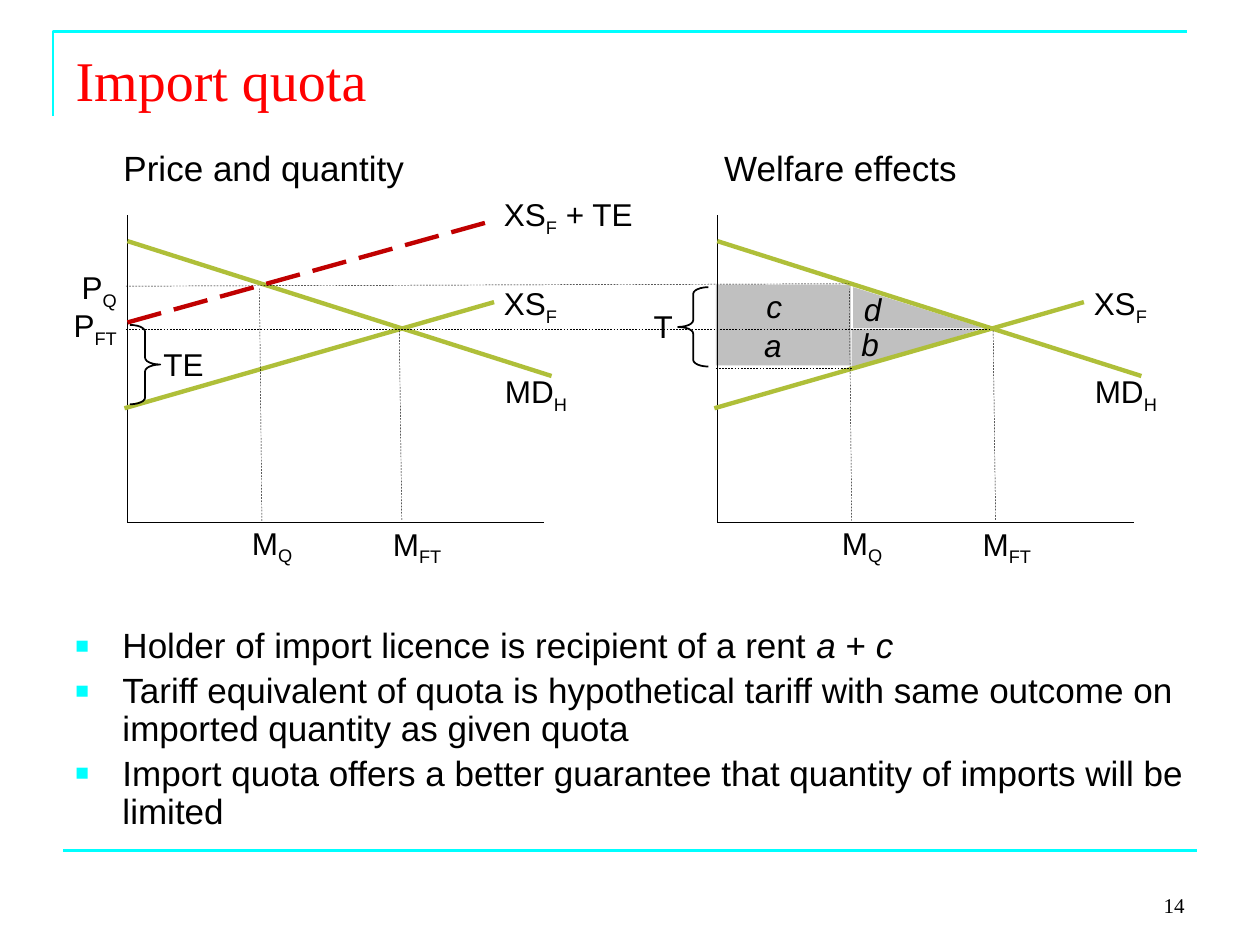
from dataclasses import dataclass

from lxml import etree
from pptx import Presentation
from pptx import util as u
from pptx.dml.color import RGBColor
from pptx.enum import dml, shapes, text
from pptx.oxml import ns

CYAN = RGBColor(0x00, 0xFF, 0xFF)
RED = RGBColor(0xFF, 0x00, 0x00)
CRIMSON = RGBColor(0xC0, 0x00, 0x00)
GREEN = RGBColor(0xAF, 0xBF, 0x39)
GRAY = RGBColor(0xC0, 0xC0, 0xC0)
BLACK = RGBColor(0x00, 0x00, 0x00)
SERIF = "Times New Roman"
LEFT, MID, RIGHT = text.PP_ALIGN.LEFT, text.PP_ALIGN.CENTER, text.PP_ALIGN.RIGHT
DASH, LONG = dml.MSO_LINE.DASH, dml.MSO_LINE.LONG_DASH
KIND = shapes.MSO_SHAPE


@dataclass
class Line:
    x1: float
    y1: float
    x2: float
    y2: float
    color: RGBColor = BLACK
    width: float = 0.25
    dash: dml.MSO_LINE | None = None


@dataclass
class Label:
    words: str
    x: float
    y: float
    w: float = 1.4
    h: float = 1.02
    align: text.PP_ALIGN = MID
    size: float = 18


@dataclass
class Panel:
    shift: float
    guide: float
    title: str
    start: float


@dataclass
class Area:
    kind: shapes.MSO_SHAPE
    x: float
    y: float
    w: float
    flip: bool = False


PANELS = [
    Panel(0, 8.1, "Price and quantity", 2.24),
    Panel(11.89, 8.18, "Welfare effects", 14.35),
]
AREAS = [
    Area(KIND.RIGHT_TRIANGLE, 17.17, 6.63, 2.62, True),
    Area(KIND.RIGHT_TRIANGLE, 17.2, 5.79, 2.62),
    Area(KIND.RECTANGLE, 14.43, 6.55, 2.72),
    Area(KIND.RECTANGLE, 14.43, 5.74, 2.72),
]
CURVES = [
    Line(2.57, 4.34, 2.57, 10.54, width=0.75),
    Line(2.57, 10.54, 10.97, 10.54, width=0.75),
    Line(2.57, 4.86, 11.12, 7.58, GREEN, 2.5),
    Line(2.51, 8.23, 9.96, 6.09, GREEN, 2.5),
    Line(5.28, 10.5, 5.23, 5.82, dash=DASH),
]
NAMES = [
    Label("MD_H", 9.93, 7.38, 2.21, align=LEFT),
    Label("M_FT", 7.67, 10.45, 2.24, align=LEFT),
    Label("XS_F", 9.91, 5.6, 2.57, align=LEFT),
    Label("M_Q", 4.83, 10.43, 2.2, align=LEFT),
]
LINKS = [
    Line(2.57, 6.5, 9.86, 4.47, CRIMSON, 2.5, LONG),
    Line(2.54, 5.77, 17.12, 5.72, dash=DASH),
    Line(2.54, 6.63, 19.96, 6.63, dash=DASH),
    Line(14.43, 7.42, 17.2, 7.42, dash=DASH),
    Line(1.27, 17.15, 24.13, 17.15, CYAN, 1.5),
]
TAGS = [
    Label("XS_F_ + TE", 9.91, 3.81, 3.48, align=LEFT),
    Label("TE", 3, 6.83),
    Label("P_Q", 1.3, 5.28),
    Label("P_FT", 1.12, 6.05, 1.6),
    Label("T", 12.67, 6.07),
    Label("*a*", 14.88, 6.45),
    Label("*b*", 16.84, 6.43),
    Label("*c*", 14.91, 5.66),
    Label("*d*", 16.89, 5.72),
]
POINTS = """Holder of import licence is recipient of a rent *a* + *c*
Tariff equivalent of quota is hypothetical tariff with same outcome on imported quantity as given quota
Import quota offers a better guarantee that quantity of imports will be limited"""


def bullet(para) -> None:
    para.line_spacing = 0.9
    para.space_before = u.Pt(4)
    props = para._p.get_or_add_pPr()
    props.set("marL", str(u.Cm(0.95)))
    props.set("indent", str(u.Cm(-0.95)))
    tint = etree.SubElement(props, ns.qn("a:buClr"))
    etree.SubElement(tint, ns.qn("a:srgbClr"), val=str(CYAN))
    etree.SubElement(props, ns.qn("a:buSzPct"), val="65000")
    etree.SubElement(props, ns.qn("a:buFont"), typeface="Arial")
    etree.SubElement(props, ns.qn("a:buChar"), char="■")


def write(frame, words: str, size: float = 18, font: str = "Arial",
          color: RGBColor = BLACK, align=LEFT,
          anchor=text.MSO_ANCHOR.TOP, marks: bool = False) -> None:
    frame.word_wrap = True
    frame.auto_size = text.MSO_AUTO_SIZE.NONE
    frame.vertical_anchor = anchor
    for row, line in enumerate(words.split("\n")):
        para = frame.add_paragraph() if row else frame.paragraphs[0]
        para.alignment = align
        if marks:
            bullet(para)
        for i, part in enumerate(line.split("_")):
            for j, bit in enumerate(part.split("*")):
                if not bit:
                    continue
                run = para.add_run()
                run.text = bit
                run.font.size = u.Pt(size)
                run.font.name = font
                run.font.color.rgb = color
                run.font.italic = j % 2 == 1
                if i % 2:
                    run._r.get_or_add_rPr().set("baseline", "-25000")


def draw(slide, line: Line, shift: float = 0) -> None:
    link = slide.shapes.add_connector(
        shapes.MSO_CONNECTOR.STRAIGHT, u.Cm(line.x1 + shift), u.Cm(line.y1),
        u.Cm(line.x2 + shift), u.Cm(line.y2))
    link.line.color.rgb = line.color
    link.line.width = u.Pt(line.width)
    if line.dash:
        link.line.dash_style = line.dash
    etree.SubElement(link._element.spPr, ns.qn("a:effectLst"))


def tag(slide, item: Label, shift: float = 0, **style) -> None:
    box = slide.shapes.add_textbox(
        u.Cm(item.x + shift), u.Cm(item.y), u.Cm(item.w), u.Cm(item.h))
    write(box.text_frame, item.words, size=item.size, align=item.align, **style)


def shade(slide, area: Area) -> None:
    shape = slide.shapes.add_shape(
        area.kind, u.Cm(area.x), u.Cm(area.y), u.Cm(area.w), u.Cm(0.82))
    shape.shadow.inherit = False
    shape.fill.solid()
    shape.fill.fore_color.rgb = GRAY
    shape.line.fill.background()
    if area.flip:
        shape._element.spPr.xfrm.set("flipV", "1")


def brace(slide, x: float, y: float, turn: float = 0) -> None:
    shape = slide.shapes.add_shape(
        KIND.LEFT_BRACE, u.Cm(x), u.Cm(y), u.Cm(0.61), u.Cm(1.6))
    shape.shadow.inherit = False
    shape.rotation = turn
    shape.adjustments[0] = 0.222
    shape.adjustments[1] = 0.501
    shape.fill.background()
    shape.line.color.rgb = BLACK
    shape.line.width = u.Pt(1)


def border(slide) -> None:
    pen = slide.shapes.build_freeform(u.Cm(1.07), u.Cm(2.34))
    pen.add_line_segments(
        [(u.Cm(1.07), u.Cm(0.64)), (u.Cm(23.93), u.Cm(0.64))], close=False)
    shape = pen.convert_to_shape()
    shape.shadow.inherit = False
    shape.fill.background()
    shape.line.color.rgb = CYAN
    shape.line.width = u.Pt(1.5)


def main() -> None:
    deck = Presentation()
    deck.slide_width, deck.slide_height = u.Cm(25.4), u.Cm(19.05)
    slide = deck.slides.add_slide(deck.slide_layouts[5])
    title = slide.shapes.title
    title.left, title.top = u.Cm(1.27), u.Cm(0.76)
    title.width, title.height = u.Cm(22.86), u.Cm(1.68)
    write(title.text_frame, "Import quota", size=32, font=SERIF, color=RED,
          anchor=text.MSO_ANCHOR.MIDDLE)
    border(slide)
    for area in AREAS:
        shade(slide, area)
    for panel in PANELS:
        tag(slide, Label(panel.title, panel.start, 2.82, 8, 1.1, LEFT, 20))
        for line in CURVES:
            draw(slide, line, panel.shift)
        draw(slide, Line(panel.guide, 10.48, panel.guide - 0.05, 6.64, dash=DASH),
             panel.shift)
        for name in NAMES:
            tag(slide, name, panel.shift)
    for line in LINKS:
        draw(slide, line)
    brace(slide, 2.62, 6.55, 180)
    brace(slide, 13.67, 5.79)
    for item in TAGS:
        tag(slide, item)
    tag(slide, Label(POINTS, 1.27, 12.55, 22.86, 4.52, LEFT, 20), marks=True)
    tag(slide, Label("14", 18.21, 17.35, 5.92, 1.27, RIGHT, 12),
        font=SERIF, anchor=text.MSO_ANCHOR.BOTTOM)
    deck.save("out.pptx")


if __name__ == "__main__":
    main()
